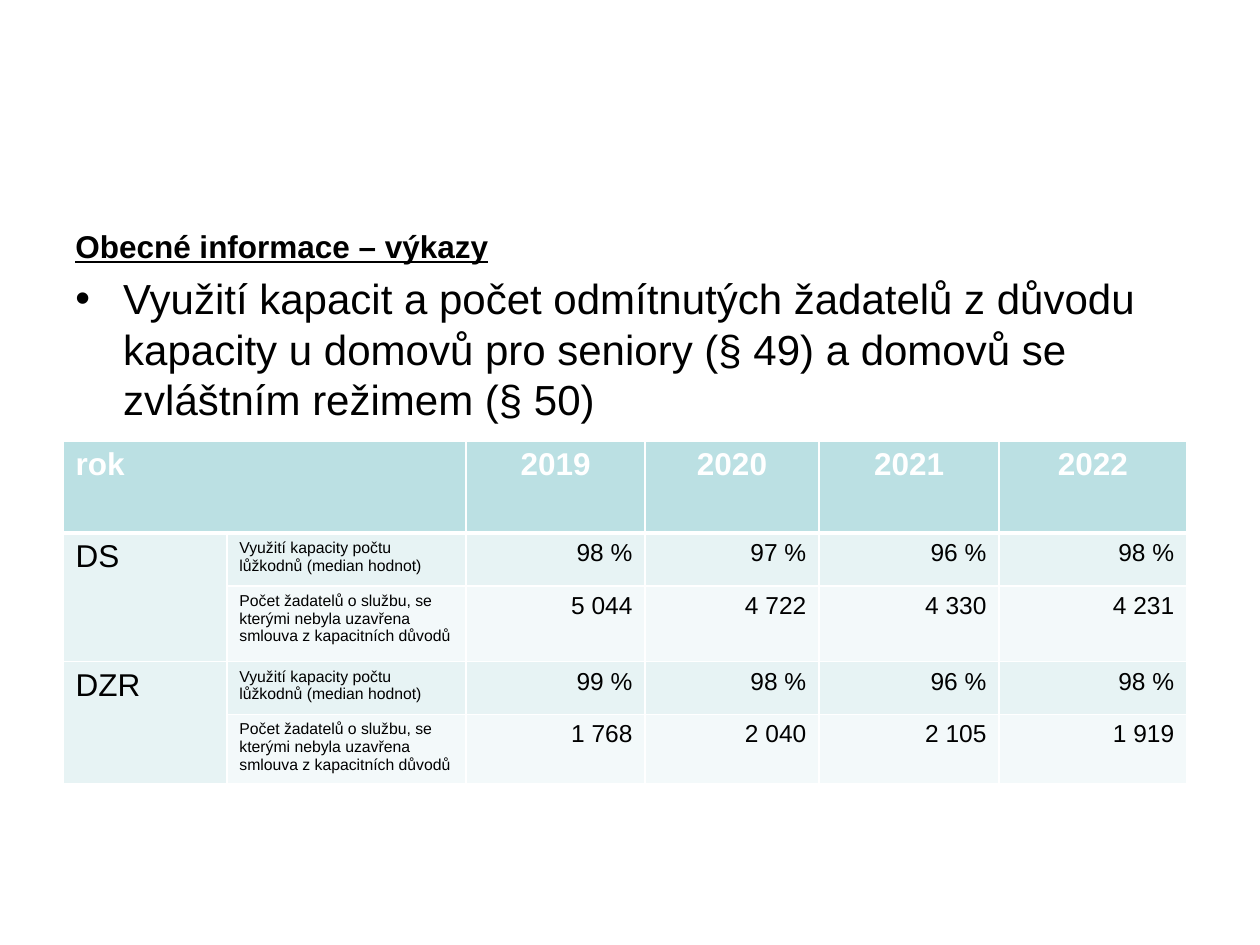
from dataclasses import dataclass

from lxml.etree import SubElement
from pptx import Presentation
from pptx.dml.color import RGBColor
from pptx.enum.text import PP_ALIGN
from pptx.oxml.ns import qn
from pptx.util import Inches, Pt


@dataclass(frozen=True)
class Theme:
    font: str = "Arial"
    text: str = "000000"
    white: str = "FFFFFF"
    header: str = "BBE0E3"
    band_dark: str = "E7F3F4"
    band_light: str = "F3F9FA"
    body_size: int = 24
    heading_size: int = 18
    value_size: int = 14
    label_size: int = 9
    border: int = 1
    header_border: int = 3


COLUMN_WIDTHS = [1.3, 1.9, 1.42, 1.38, 1.43, 1.49]
ROW_HEIGHTS = [0.73, 0.42, 0.6, 0.42, 0.42]
YEARS = ["2019", "2020", "2021", "2022"]
MEASURES = [
    "Využití kapacity počtu lůžkodnů (median hodnot)",
    "Počet žadatelů o službu, se kterými nebyla uzavřena smlouva z kapacitních důvodů",
]
SERVICES = {
    "DS": [["98 %", "97 %", "96 %", "98 %"], ["5 044", "4 722", "4 330", "4 231"]],
    "DZR": [["99 %", "98 %", "96 %", "98 %"], ["1 768", "2 040", "2 105", "1 919"]],
}


class SlideBuilder:
    def __init__(self, slide, theme):
        self.slide = slide
        self.theme = theme

    def add_text(self, para, text, size, color=None, align=PP_ALIGN.LEFT, **formats):
        para.alignment = align
        span = para.add_run()
        span.text = text
        settings = {"name": self.theme.font, "size": Pt(size), "bold": False, **formats}
        for name, value in settings.items():
            setattr(span.font, name, value)
        span.font.color.rgb = RGBColor.from_string(color or self.theme.text)

    def bullet(self, para, indent):
        properties = para._p.get_or_add_pPr()
        properties.set("marL", str(Inches(indent)))
        properties.set("indent", str(-Inches(indent)))
        SubElement(properties, qn("a:buFont"), typeface=self.theme.font)
        SubElement(properties, qn("a:buChar"), char="•")

    def body(self, heading, point, left, top, width, height):
        box = self.slide.shapes.add_textbox(
            Inches(left), Inches(top), Inches(width), Inches(height))
        frame = box.text_frame
        frame.word_wrap = True
        self.add_text(frame.paragraphs[0], heading, self.theme.heading_size,
                      bold=True, underline=True)
        para = frame.add_paragraph()
        self.bullet(para, 0.38)
        para.space_before = Pt(0.2 * self.theme.body_size)
        self.add_text(para, point, self.theme.body_size)

    def table(self, left, top, widths, heights):
        frame = self.slide.shapes.add_table(
            len(heights), len(widths), Inches(left), Inches(top),
            Inches(sum(widths)), Inches(sum(heights)))
        table = frame.table
        for column, width in zip(table.columns, widths):
            column.width = Inches(width)
        for row, height in zip(table.rows, heights):
            row.height = Inches(height)
        return table

    def style_cell(self, cell, color, top=None, bottom=None):
        """Draw the cell's white borders, then its fill."""
        properties = cell._tc.get_or_add_tcPr()
        thin = self.theme.border
        sides = {"a:lnL": thin, "a:lnR": thin, "a:lnT": top or thin, "a:lnB": bottom or thin}
        for tag, width in sides.items():
            line = SubElement(properties, qn(tag), w=str(Pt(width)))
            fill = SubElement(line, qn("a:solidFill"))
            SubElement(fill, qn("a:srgbClr"), val=self.theme.white)
        cell.fill.solid()
        cell.fill.fore_color.rgb = RGBColor.from_string(color)

    def cell_text(self, cell, text, size, **formats):
        self.add_text(cell.text_frame.paragraphs[0], text, size, **formats)

    def capacity_table(self, left, top):
        theme = self.theme
        table = self.table(left, top, COLUMN_WIDTHS, ROW_HEIGHTS)
        bands = [theme.band_dark, theme.band_light]
        for row_index, row in enumerate(table.rows):
            for column_index, cell in enumerate(row.cells):
                if row_index == 0:
                    self.style_cell(cell, theme.header, bottom=theme.header_border)
                else:
                    band = bands[0 if column_index == 0 else (row_index - 1) % 2]
                    self.style_cell(cell, band,
                                    top=theme.header_border if row_index == 1 else None)

        table.cell(0, 0).merge(table.cell(0, 1))
        header = {"size": theme.heading_size, "color": theme.white, "bold": True}
        self.cell_text(table.cell(0, 0), "rok", **header)
        for column, year in enumerate(YEARS, 2):
            self.cell_text(table.cell(0, column), year, align=PP_ALIGN.CENTER, **header)

        for index, (service, rows) in enumerate(SERVICES.items()):
            first = 1 + index * len(MEASURES)
            table.cell(first, 0).merge(table.cell(first + len(MEASURES) - 1, 0))
            self.cell_text(table.cell(first, 0), service, theme.heading_size)
            for row, (measure, values) in enumerate(zip(MEASURES, rows), first):
                self.cell_text(table.cell(row, 1), measure, theme.label_size)
                for column, value in enumerate(values, 2):
                    self.cell_text(table.cell(row, column), value, theme.value_size,
                                   align=PP_ALIGN.RIGHT)


def main():
    deck = Presentation()
    deck.slide_width, deck.slide_height = Inches(10), Inches(7.5)
    page = SlideBuilder(deck.slides.add_slide(deck.slide_layouts[6]), Theme())
    page.body(
        "Obecné informace – výkazy",
        "Využití kapacit a počet odmítnutých žadatelů z důvodu kapacity u domovů "
        "pro seniory (§ 49) a domovů se zvláštním režimem (§ 50)",
        0.5, 1.75, 9, 4.95)
    page.capacity_table(0.5, 3.5)
    deck.save("out.pptx")


if __name__ == "__main__":
    main()
